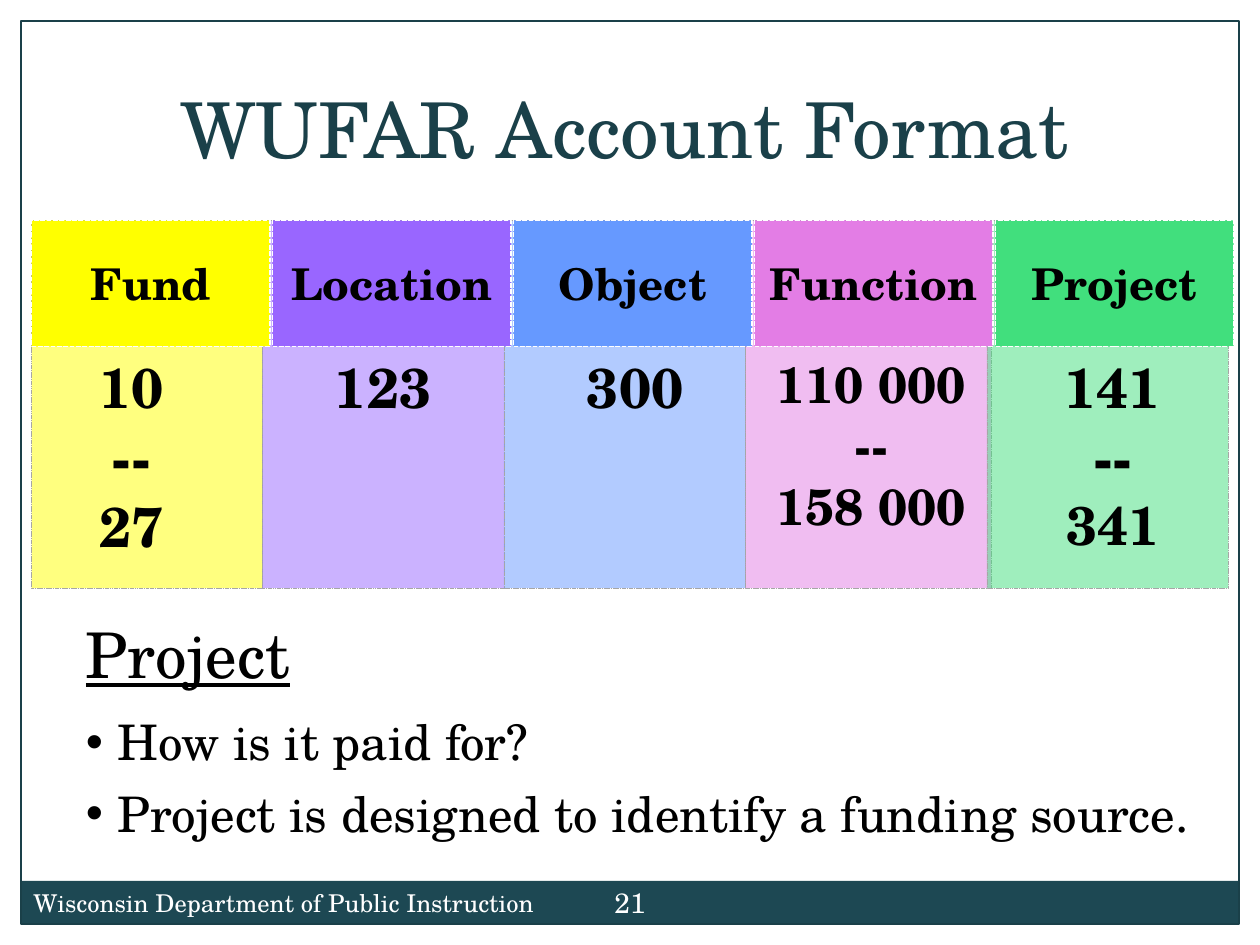
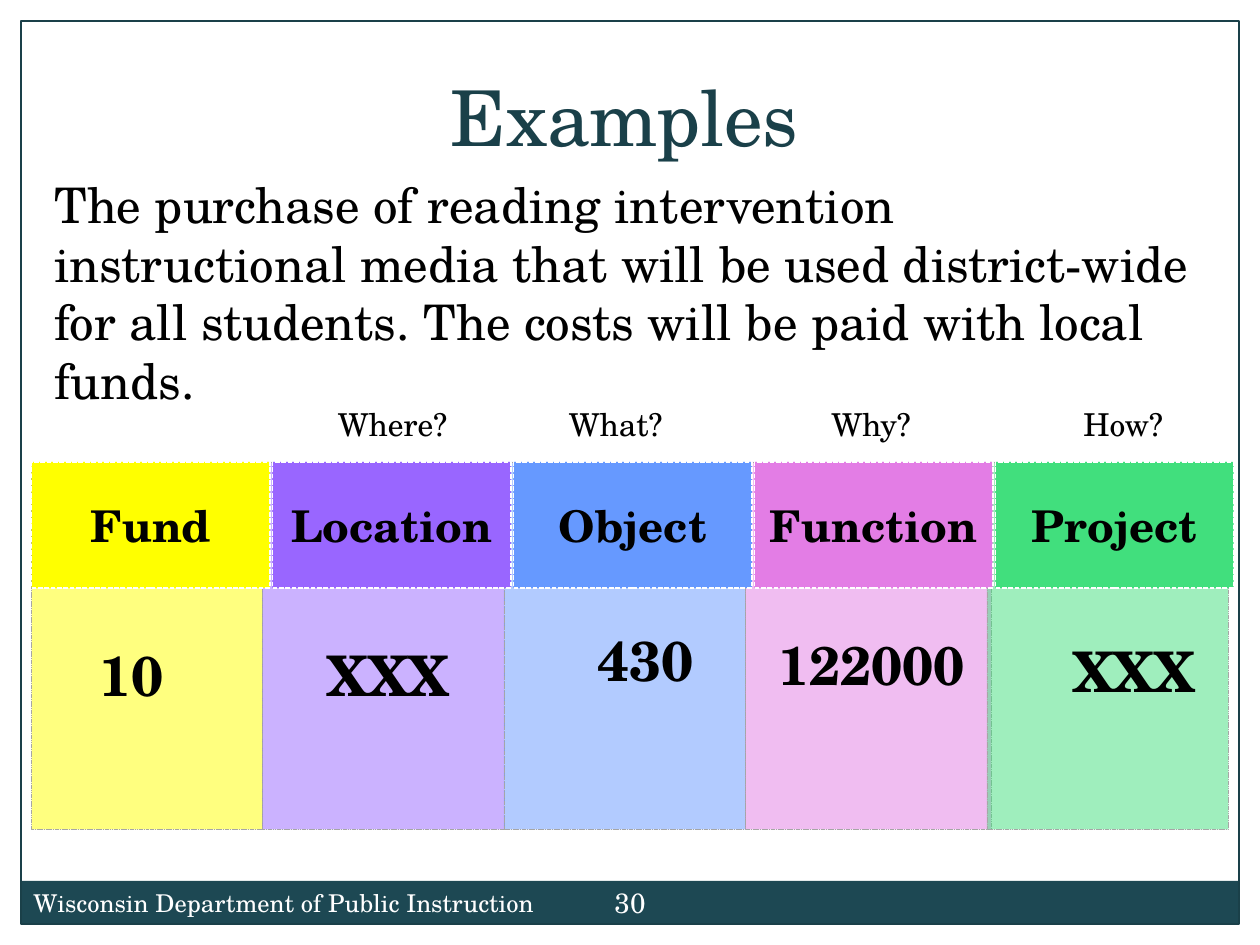
from lxml.etree import SubElement as Sub
from pptx import Presentation
from pptx.dml.color import RGBColor as Rgb
from pptx.enum.dml import MSO_LINE as Dash
from pptx.enum.shapes import MSO_SHAPE as Form
from pptx.enum.text import MSO_ANCHOR as Anchor, PP_ALIGN as Align
from pptx.oxml.ns import qn
from pptx.util import Inches, Pt

FONT = "TeX Gyre Schola"
INK, WHITE, TEAL, BAR, GREY = "000000", "FFFFFF", "1A4049", "1D4853", "A6A6A6"
UNIT = Inches(1) / 12
WIDE, HIGH = 120, 90
LEFT, STEP, HEAD_W, HEAD_H, BODY_H = 3, 22.95, 22.7, 12, 35
COLS = [
    ("Fund", "FFFF00", 3, 22),
    ("Location", "9966FF", 25, 23),
    ("Object", "6699FF", 48, 23),
    ("Function", "E37DE5", 71, 23.4),
    ("Project", "41DF7D", 94, 23),
]


def hue(code):
    """Turn a hex string into a colour."""
    return Rgb.from_string(code)


def place(box):
    """Turn a box in grid units into slide lengths."""
    return [round(part * UNIT) for part in box]


def write(shape, lines, size=28, color=INK, bold=False, under=False,
          align=Align.LEFT, anchor=Anchor.TOP, inset=None, bullet=False):
    """Fill a shape with lines, with one size for all or one for each."""
    frame = shape.text_frame
    frame.word_wrap = True
    frame.vertical_anchor = anchor
    if inset is not None:
        frame.margin_left = frame.margin_right = Inches(inset)
        frame.margin_top = frame.margin_bottom = Inches(inset)
    sizes = size if isinstance(size, tuple) else (size,) * len(lines)
    for num, (line, pts) in enumerate(zip(lines, sizes)):
        para = frame.paragraphs[0] if num == 0 else frame.add_paragraph()
        para.alignment = align
        run = para.add_run()
        run.text = line
        font = run.font
        font.name, font.size, font.bold = FONT, Pt(pts), bold
        font.underline = under
        font.color.rgb = hue(color)
        if bullet:
            props = para._p.get_or_add_pPr()
            props.set("marL", str(Inches(0.25)))
            props.set("indent", str(-Inches(0.25)))
            Sub(props, qn("a:buFont")).set("typeface", "Arial")
            Sub(props, qn("a:buChar")).set("char", "•")


def label(slide, box, *lines, **form):
    """Add a text box with formatted lines."""
    write(slide.shapes.add_textbox(*place(box)), lines, **form)


def block(slide, box, fill=None, line=None, width=0.75, dash=None, alpha=None):
    """Add a rectangle with its fill and outline."""
    shape = slide.shapes.add_shape(Form.RECTANGLE, *place(box))
    shape.shadow.inherit = False
    if fill:
        shape.fill.solid()
        shape.fill.fore_color.rgb = hue(fill)
    else:
        shape.fill.background()
    if line:
        shape.line.color.rgb = hue(line)
        shape.line.width = Pt(width)
    else:
        shape.line.fill.background()
    if dash:
        shape.line.dash_style = dash
    if alpha:
        tone = shape.fill._xPr.find(".//" + qn("a:srgbClr"))
        Sub(tone, qn("a:alpha")).set("val", str(alpha * 1000))
    return shape


def base(deck, title, page, depth):
    """Start a slide with its frame, footer, number and title."""
    slide = deck.slides.add_slide(deck.slide_layouts[6])
    block(slide, (2, 83.9, WIDE - 4, 4.1), BAR)
    block(slide, (2, 2, WIDE - 4, HIGH - 4), line=TEAL)
    label(slide, (2, 84, 53, 6), "Wisconsin Department of Public Instruction",
          size=14, color=WHITE)
    label(slide, (56, 83, 8, 5.8), page, size=16, color=WHITE,
          align=Align.CENTER, anchor=Anchor.MIDDLE, inset=0.05)
    label(slide, (3, 4, 113, depth), title, size=44, color=TEAL,
          align=Align.CENTER, anchor=Anchor.BOTTOM)
    return slide


def chart(slide, top, codes):
    """Draw the five account columns from a top row, with their codes."""
    for name, fill, left, wide in COLS:
        block(slide, (left, top, wide, BODY_H), fill, GREY, 0.25,
              Dash.SQUARE_DOT, 50)
    for left, drop, wide, size, lines in codes:
        label(slide, (left, top + drop, wide, 7.7 * len(lines)), *lines,
              size=size, bold=True, align=Align.CENTER)
    for num, (name, fill, *rest) in enumerate(COLS):
        head = block(slide, (LEFT + num * STEP, top, HEAD_W, HEAD_H), fill,
                     WHITE, 0.9, Dash.SQUARE_DOT)
        write(head, [name], size=25, bold=True, align=Align.CENTER,
              anchor=Anchor.MIDDLE)


def account(deck):
    """Build the slide on the account format."""
    slide = base(deck, "WUFAR Account Format", "21", 13.2)
    chart(slide, 21, [
        (6, 12, 13, (32, 34, 32), ("10", "--", "27")),
        (30, 12, 13, 32, ("123",)),
        (53, 12, 15, 32, ("300",)),
        (71, 12, 24, 29, ("110 000", "--", "158 000")),
        (94, 12, 24, (32, 34, 31), ("141", "--", "341")),
    ])
    label(slide, (7, 58, 56, 8), "Project", size=36, under=True)
    notes = "How is it paid for?", "Project is designed to identify a funding source."
    for num, note in enumerate(notes):
        label(slide, (7, 67.2 + 6.8 * num, 110, 6.8), note, bullet=True)


def sample(deck):
    """Build the slide with a worked example."""
    slide = base(deck, "Examples", "30", 12)
    top = 44
    label(slide, (4, 16, 111, 18),
          "The purchase of reading intervention instructional media that will "
          "be used district-wide for all students. The costs will be paid with "
          "local funds.")
    asks = ("Where?", 31), ("What?", 53), ("Why?", 78), ("How?", 102)
    for ask, left in asks:
        label(slide, (left, top - 6, 13, 4.8), ask, size=18)
    chart(slide, top, [
        (6, 16.4, 13, 32, ("10",)),
        (29, 16.4, 16, 32, ("XXX",)),
        (51.5, 15, 20, 32, ("430",)),
        (71, 15.5, 24, 31, ("122000",)),
        (96, 16, 24, 32, ("XXX",)),
    ])


def main():
    """Build and save the deck."""
    deck = Presentation()
    deck.slide_width, deck.slide_height = place((WIDE, HIGH))
    account(deck)
    sample(deck)
    deck.save("out.pptx")


if __name__ == "__main__":
    main()
